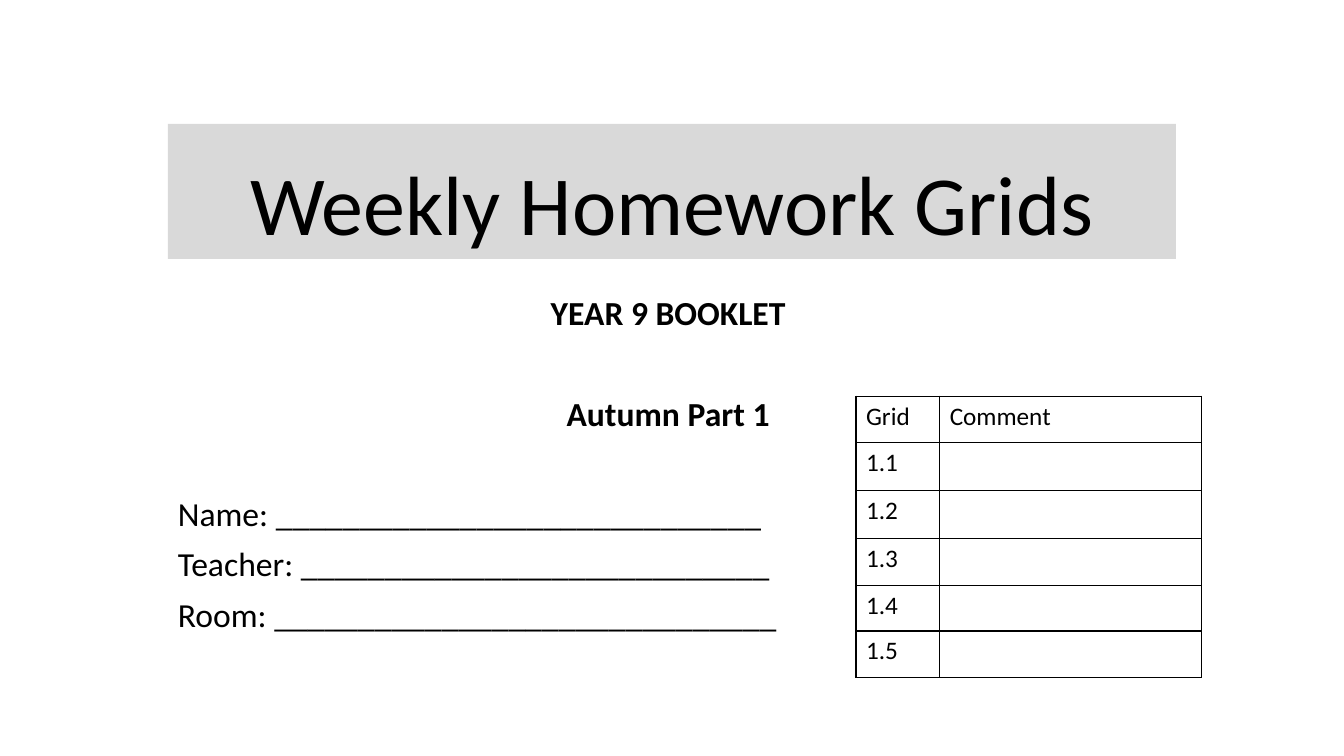
"""Build the cover slide of a weekly homework booklet."""
from lxml.etree import SubElement
from pptx import Presentation
from pptx.dml.color import RGBColor
from pptx.enum.shapes import MSO_SHAPE
from pptx.enum.text import MSO_ANCHOR, PP_ALIGN
from pptx.oxml.ns import qn
from pptx.util import Inches, Pt

COLOURS = {"ink": "000000", "banner": "D9D9D9", "paper": "FFFFFF"}


def write(paragraph, text, size, bold=False, **paragraph_format):
    """Fill a paragraph with one formatted run."""
    for name, value in paragraph_format.items():
        setattr(paragraph, name, value)
    font = paragraph.font
    if text:
        run = paragraph.add_run()
        run.text = text
        font = run.font
    for name, value in {"name": "Calibri", "size": Pt(size), "bold": bold}.items():
        setattr(font, name, value)
    font.color.rgb = RGBColor.from_string(COLOURS["ink"])


def add_borders(cell):
    """Draw a thin line on all four sides of a cell."""
    properties = cell._tc.get_or_add_tcPr()
    for position, side in enumerate(("a:lnL", "a:lnR", "a:lnT", "a:lnB")):
        line = properties.makeelement(qn(side), {"w": str(Pt(1))})
        fill = SubElement(line, qn("a:solidFill"))
        SubElement(fill, qn("a:srgbClr"), val=COLOURS["ink"])
        properties.insert(position, line)


presentation = Presentation()
presentation.slide_width = Inches(13.33)
presentation.slide_height = Inches(7.5)
slide = presentation.slides.add_slide(presentation.slide_layouts[6])

margin = presentation.slide_width // 8
content_width = presentation.slide_width - 2 * margin

banner = slide.shapes.add_shape(
    MSO_SHAPE.RECTANGLE, margin, Inches(1.23), content_width, Inches(1.34))
banner.shadow.inherit = False
banner.fill.solid()
banner.fill.fore_color.rgb = RGBColor.from_string(COLOURS["banner"])
banner.line.fill.background()
banner.text_frame.word_wrap = True
banner.text_frame.vertical_anchor = MSO_ANCHOR.BOTTOM
write(banner.text_frame.paragraphs[0], "Weekly Homework Grids", 60,
      alignment=PP_ALIGN.CENTER, line_spacing=0.9)

details = slide.shapes.add_textbox(margin, Inches(2.89), content_width, Inches(3.71))
details.text_frame.word_wrap = True
detail_lines = [
    ("YEAR 9 BOOKLET ", True, 0),
    ("Autumn Part 1 ", True, 46),
    ("Name: " + "_" * 29, False, 46),
    ("Teacher: " + "_" * 28, False, 10),
    ("Room: " + "_" * 30, False, 10),
]
for index, (text, heading, gap) in enumerate(detail_lines):
    frame = details.text_frame
    paragraph = frame.add_paragraph() if index else frame.paragraphs[0]
    write(paragraph, text, 24, heading, line_spacing=0.9, space_before=Pt(gap),
          alignment=PP_ALIGN.CENTER if heading else PP_ALIGN.LEFT)

grid_rows = [("Grid", "Comment")] + [(f"1.{number}", "") for number in range(1, 5)]
grid_rows.append(("1.5 ", ""))
column_widths = (0.83, 2.6)
row_heights = (0.46, 0.48, 0.47, 0.47, 0.45, 0.46)
table = slide.shapes.add_table(
    len(grid_rows), len(column_widths), Inches(8.49), Inches(3.93),
    Inches(sum(column_widths)), Inches(sum(row_heights))).table
table.first_row = table.horz_banding = False
for column, width in zip(table.columns, column_widths):
    column.width = Inches(width)
for row, height, texts in zip(table.rows, row_heights, grid_rows):
    row.height = Inches(height)
    for cell, text in zip(row.cells, texts):
        cell.fill.solid()
        cell.fill.fore_color.rgb = RGBColor.from_string(COLOURS["paper"])
        write(cell.text_frame.paragraphs[0], text, 18)
        add_borders(cell)

presentation.save("out.pptx")
